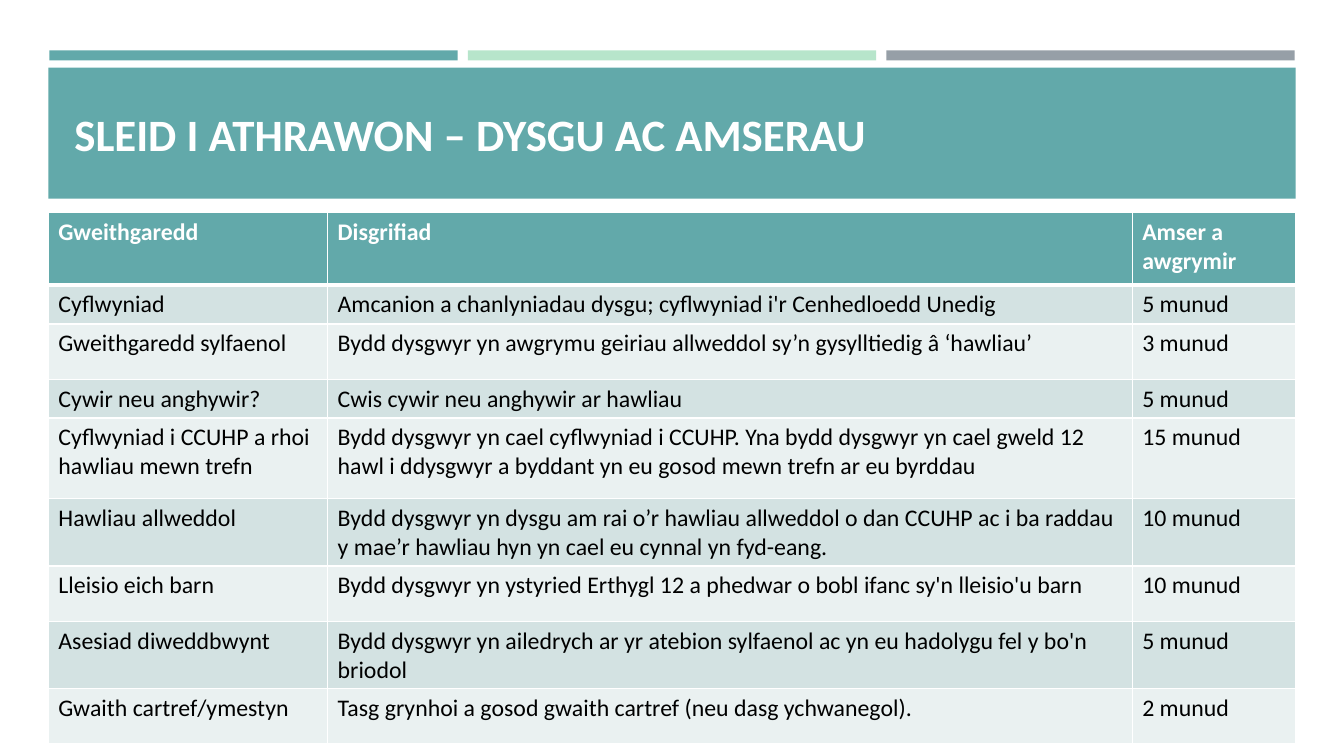
from lxml.etree import SubElement
from pptx import Presentation
from pptx.dml.color import RGBColor
from pptx.enum.shapes import MSO_SHAPE
from pptx.enum.text import MSO_ANCHOR
from pptx.oxml.ns import qn
from pptx.util import Inches, Pt

TEAL = RGBColor(0x62, 0xA9, 0xAA)
MINT = RGBColor(0xB7, 0xE5, 0xCB)
GREY = RGBColor(0x96, 0x9F, 0xA7)
BAND_DARK = RGBColor(0xD3, 0xE2, 0xE2)
BAND_LIGHT = RGBColor(0xEA, 0xF1, 0xF1)
WHITE = RGBColor(0xFF, 0xFF, 0xFF)
BLACK = RGBColor(0, 0, 0)

LEFT, WIDTH = 0.48, 12.37
BAR_WIDTH, BAR_STEP = 4.05, 4.15
COLUMNS = [2.77, 7.98, 1.62]
HEIGHTS = [0.72, 0.38, 0.55, 0.38, 0.8, 0.65, 0.55, 0.65, 0.55]
ACTIVITIES = [
    ("Gweithgaredd", "Disgrifiad", "Amser a awgrymir"),
    ("Cyflwyniad",
     "Amcanion a chanlyniadau dysgu; cyflwyniad i'r Cenhedloedd Unedig",
     "5 munud"),
    ("Gweithgaredd sylfaenol",
     "Bydd dysgwyr yn awgrymu geiriau allweddol sy’n gysylltiedig â ‘hawliau’",
     "3 munud"),
    ("Cywir neu anghywir?", "Cwis cywir neu anghywir ar hawliau", "5 munud"),
    ("Cyflwyniad i CCUHP a rhoi hawliau mewn trefn",
     "Bydd dysgwyr yn cael cyflwyniad i CCUHP. Yna bydd dysgwyr yn cael gweld 12 "
     "hawl i ddysgwyr a byddant yn eu gosod mewn trefn ar eu byrddau",
     "15 munud"),
    ("Hawliau allweddol",
     "Bydd dysgwyr yn dysgu am rai o’r hawliau allweddol o dan CCUHP ac i ba raddau "
     "y mae’r hawliau hyn yn cael eu cynnal yn fyd-eang.",
     "10 munud"),
    ("Lleisio eich barn",
     "Bydd dysgwyr yn ystyried Erthygl 12 a phedwar o bobl ifanc sy'n lleisio'u barn",
     "10 munud"),
    ("Asesiad diweddbwynt",
     "Bydd dysgwyr yn ailedrych ar yr atebion sylfaenol ac yn eu hadolygu fel y bo'n briodol",
     "5 munud"),
    ("Gwaith cartref/ymestyn",
     "Tasg grynhoi a gosod gwaith cartref (neu dasg ychwanegol).",
     "2 munud"),
]


def write(tf, text, size=17, color=BLACK, bold=False, font="Calibri"):
    r = tf.paragraphs[0].add_run()
    r.text = text
    r.font.name, r.font.size, r.font.bold = font, Pt(size), bold
    r.font.color.rgb = color


def set_borders(cell, **widths):
    tcPr = cell._tc.get_or_add_tcPr()
    for side in "LRTB":
        ln = SubElement(tcPr, qn(f"a:ln{side}"), w=str(Pt(widths.get(side, 1))))
        fill = SubElement(ln, qn("a:solidFill"))
        SubElement(fill, qn("a:srgbClr"), val=str(WHITE))


class SlideBuilder:
    def __init__(self, prs):
        self.s = prs.slides.add_slide(prs.slide_layouts[6])

    def bar(self, x, y, w, h, color):
        sp = self.s.shapes.add_shape(
            MSO_SHAPE.RECTANGLE, Inches(x), Inches(y), Inches(w), Inches(h))
        sp.shadow.inherit = False
        sp.fill.solid()
        sp.fill.fore_color.rgb = color
        sp.line.fill.background()

    def title(self, text, x, y, w, h):
        tf = self.s.shapes.add_textbox(
            Inches(x), Inches(y), Inches(w), Inches(h)).text_frame
        tf.word_wrap = True
        tf.vertical_anchor = MSO_ANCHOR.MIDDLE
        write(tf, text, size=32, color=WHITE, bold=True)

    def table(self, rows, x, y, widths, heights):
        table = self.s.shapes.add_table(
            len(rows), len(widths), Inches(x), Inches(y),
            Inches(sum(widths)), Inches(sum(heights))).table
        for column, width in zip(table.columns, widths):
            column.width = Inches(width)
        for i, (row, height) in enumerate(zip(rows, heights)):
            table.rows[i].height = Inches(height)
            header = i == 0
            band = TEAL if header else BAND_DARK if i % 2 else BAND_LIGHT
            for j, text in enumerate(row):
                cell = table.cell(i, j)
                # Thick rule between the header and the body
                set_borders(cell, B=3 if header else 1, T=3 if i == 1 else 1)
                cell.fill.solid()
                cell.fill.fore_color.rgb = band
                write(cell.text_frame, text, bold=header,
                      color=WHITE if header else BLACK)


def main():
    prs = Presentation()
    prs.slide_width, prs.slide_height = Inches(13.33), Inches(7.5)
    slide = SlideBuilder(prs)

    # Three accent bars
    for i, color in enumerate([TEAL, MINT, GREY]):
        slide.bar(0.49 + i * BAR_STEP, 0.5, BAR_WIDTH, 0.1, color)

    # Title band
    slide.bar(LEFT, 0.67, WIDTH, 1.3, TEAL)
    slide.title("SLEID I ATHRAWON – DYSGU AC AMSERAU", 0.64, 0.77, 12.06, 1.11)

    # Activities and timings
    slide.table(ACTIVITIES, LEFT, 2.11, COLUMNS, HEIGHTS)

    prs.save("out.pptx")


if __name__ == "__main__":
    main()
